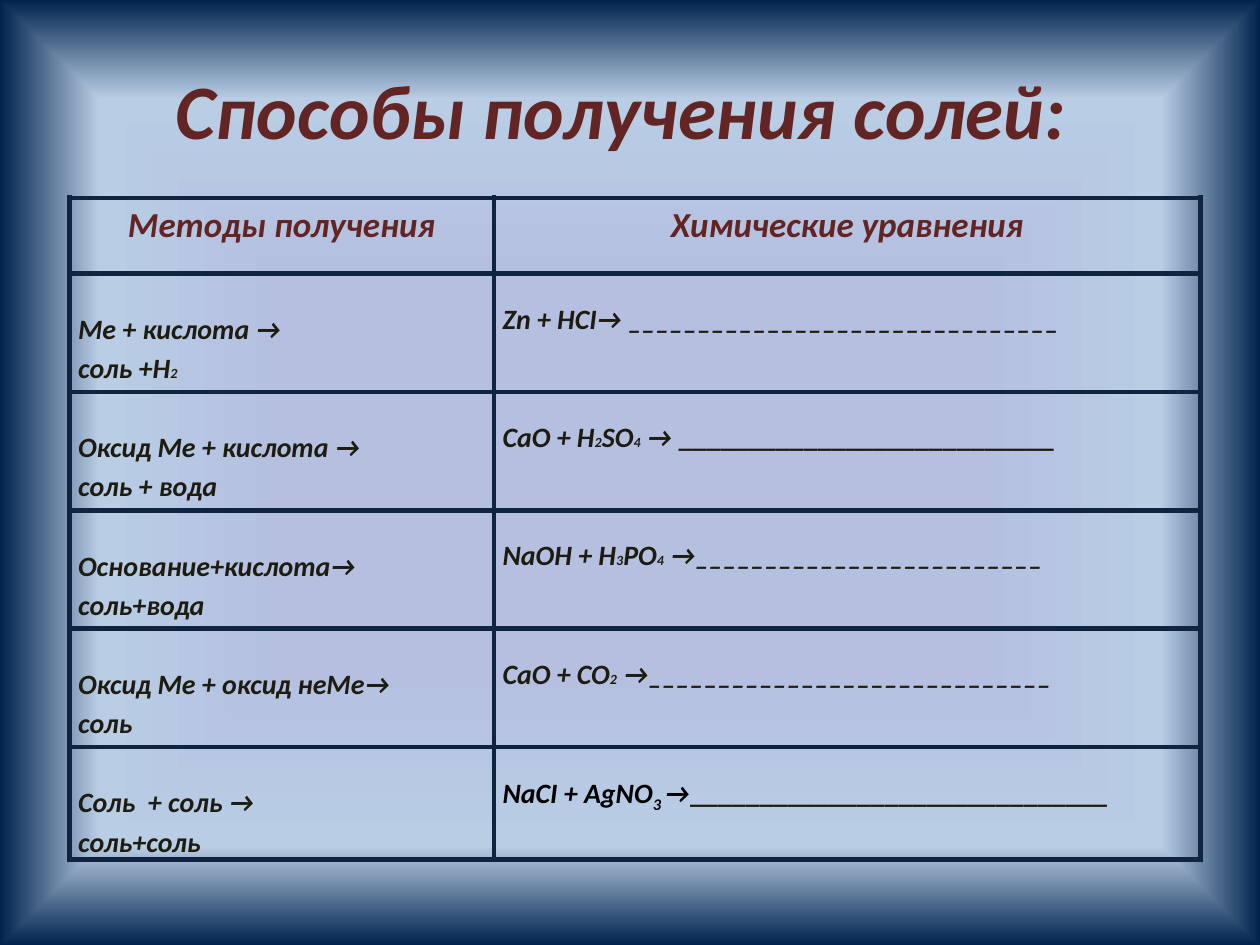
import lxml.etree
import pptx
import pptx.dml.color
import pptx.enum.text
import pptx.oxml
import pptx.oxml.ns
import pptx.util
from pptx.util import Inches

COLORS = {"heading": "632523", "text": "1E1C11", "black": "000000", "border": "0F243E"}
GRADIENT = [(40, "B5C0E0"), (79, "B9CDE5"), (100, "00234D")]
BODY = {"size": 16, "color": "text"}
SUBSCRIPT = {"size": 8}
UPRIGHT = {"italic": False}
BLACK = {"color": "black"}
CENTER = pptx.enum.text.PP_ALIGN.CENTER
LEFT = pptx.enum.text.PP_ALIGN.LEFT

HEADERS = ["Методы получения", "Химические уравнения"]
METHODS = [
    [[("Ме + кислота →", {})], [("соль +Н", {}), ("2", SUBSCRIPT)]],
    [[("Оксид Ме + кислота →", {})], [("соль + вода", {})]],
    [[("Основание+кислота→", {})], [("соль+вода", {})]],
    [[("Оксид Ме + оксид неМе→", {})], [("соль", {})]],
    [[("Соль  + соль →", {})], [("соль+соль", {})]],
]
EQUATIONS = [
    [("Zn + HCI→ " + "_" * 31, {})],
    [("CaO + H", {}), ("2", SUBSCRIPT), ("SO", {}), ("4", SUBSCRIPT), (" → ", {}),
     ("_" * 27, UPRIGHT)],
    [("NaOH + H", {}), ("3", SUBSCRIPT), ("PO", {}), ("4", SUBSCRIPT),
     (" →" + "_" * 25, {})],
    [("CaO + CO", {}), ("2", SUBSCRIPT), (" →" + "_" * 29, {})],
    [("NaCI + AgNO", BLACK), ("3 ", {**BLACK, "baseline": -25000}), ("→", BLACK),
     ("_" * 30, UPRIGHT)],
]


class SlideBuilder:
    """Holds the style and the current slide, and adds each kind of element."""

    def __init__(self, presentation):
        self.font_name = "Calibri"
        self.slide = presentation.slides.add_slide(presentation.slide_layouts[5])

    def set_background(self, stops):
        fill = self.slide.background.fill
        fill.solid()
        stop_xml = "".join(
            f'<a:gs pos="{position * 1000}"><a:srgbClr val="{color}"/></a:gs>'
            for position, color in stops)
        gradient = pptx.oxml.parse_xml(
            f'<a:gradFill {pptx.oxml.ns.nsdecls("a")} rotWithShape="1">'
            f'<a:gsLst>{stop_xml}</a:gsLst><a:path path="shape">'
            '<a:fillToRect l="50000" t="50000" r="50000" b="50000"/></a:path></a:gradFill>')
        solid = self.slide.element.find(".//" + pptx.oxml.ns.qn("p:bgPr"))[0]
        solid.getparent().replace(solid, gradient)

    def add_run(self, paragraph, text, style):
        run = paragraph.add_run()
        run.text = text
        values = {"name": self.font_name, "size": pptx.util.Pt(style["size"]),
                  "bold": True, "italic": style.get("italic", True)}
        for name, value in values.items():
            setattr(run.font, name, value)
        run.font.color.rgb = pptx.dml.color.RGBColor.from_string(COLORS[style["color"]])
        if "baseline" in style:
            run.font._element.set("baseline", str(style["baseline"]))

    def add_title(self, text, left, top, width, height):
        title = self.slide.shapes.title
        for name, value in {"left": left, "top": top, "width": width, "height": height}.items():
            setattr(title, name, value)
        title.text_frame.vertical_anchor = pptx.enum.text.MSO_ANCHOR.MIDDLE
        paragraph = title.text_frame.paragraphs[0]
        paragraph.alignment = CENTER
        self.add_run(paragraph, text, {"size": 44, "color": "heading"})

    def add_table(self, left, top, widths, heights):
        table = self.slide.shapes.add_table(
            len(heights), len(widths), left, top, sum(widths), sum(heights)).table
        table.first_row = table.horz_banding = False
        for column, width in zip(table.columns, widths):
            column.width = width
        for row, height in zip(table.rows, heights):
            row.height = height
        return table

    def fill_cell(self, cell, lines, style, alignment=LEFT, margin_top=0):
        margins = {"margin_left": Inches(0.07), "margin_right": Inches(0.07),
                   "margin_top": margin_top, "margin_bottom": 0}
        for name, value in margins.items():
            setattr(cell, name, value)
        cell.fill.background()
        self.add_borders(cell)
        frame = cell.text_frame
        for index, line in enumerate(lines):
            paragraph = frame.add_paragraph() if index else frame.paragraphs[0]
            paragraph.alignment = alignment
            paragraph.line_spacing = 1.15
            for text, changes in line:
                self.add_run(paragraph, text, {**style, **changes})

    def add_borders(self, cell):
        properties = cell._tc.get_or_add_tcPr()
        for index, side in enumerate("LRTB"):
            properties.insert(index, pptx.oxml.parse_xml(
                f'<a:ln{side} {pptx.oxml.ns.nsdecls("a")} w="{pptx.util.Pt(3)}">'
                f'<a:solidFill><a:srgbClr val="{COLORS["border"]}"/></a:solidFill>'
                f'</a:ln{side}>'))


def main():
    presentation = pptx.Presentation()
    presentation.slide_width = Inches(10)
    presentation.slide_height = Inches(7.5)
    builder = SlideBuilder(presentation)
    builder.set_background(GRADIENT)
    builder.add_title("Способы получения солей: ", 0, Inches(0.36), Inches(10), Inches(1))
    heights = [Inches(0.6)] + [Inches(0.94)] * 4 + [Inches(0.87)]
    table = builder.add_table(
        Inches(0.55), Inches(1.57), [Inches(3.37), Inches(5.61)], heights)
    for column, header in enumerate(HEADERS):
        builder.fill_cell(table.cell(0, column), [[(header, {})]],
                          {"size": 20, "color": "heading"}, CENTER)
    for row, (method, equation) in enumerate(zip(METHODS, EQUATIONS), 1):
        builder.fill_cell(table.cell(row, 0), method, BODY, margin_top=Inches(0.27))
        builder.fill_cell(table.cell(row, 1), [equation], BODY, margin_top=Inches(0.19))
    presentation.save("out.pptx")


if __name__ == "__main__":
    main()
